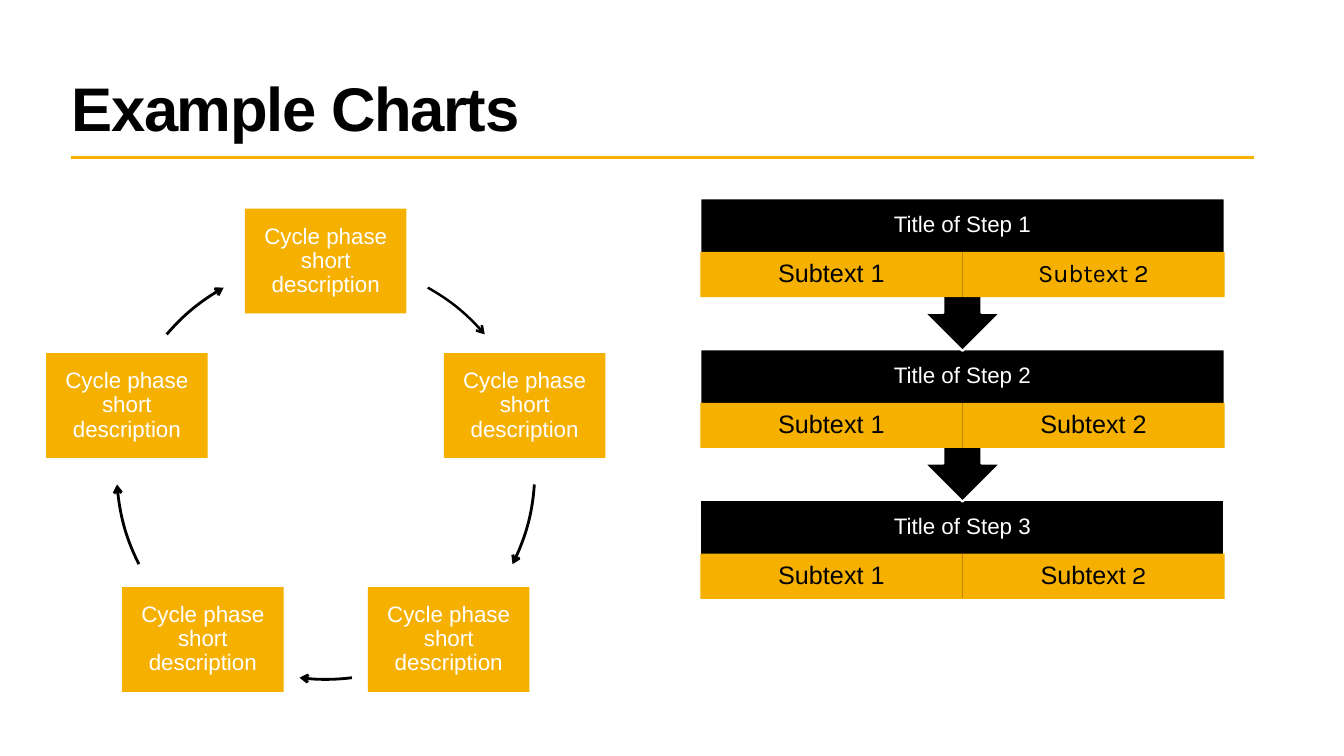
import math
from dataclasses import dataclass

import pptx
import pptx.util
import pptx.dml.color
import pptx.enum.shapes
import pptx.enum.text
import pptx.oxml.ns
from lxml import etree

Cm, Pt = pptx.util.Cm, pptx.util.Pt
SHAPE = pptx.enum.shapes.MSO_SHAPE
ALIGN = pptx.enum.text.PP_ALIGN


@dataclass(frozen=True)
class Theme:
    gold: str = "F5B000"
    black: str = "000000"
    white: str = "FFFFFF"
    font: str = "Arial"
    alt: str = "Karla"
    head: int = 44
    label: int = 16
    sub: int = 18


THEME = Theme()


def color(code):
    return pptx.dml.color.RGBColor.from_string(code)


def add_tail(line):
    """Put an open arrowhead at the end of a line."""
    ln = line._get_or_add_ln()
    etree.SubElement(ln, pptx.oxml.ns.qn("a:tailEnd"), type="arrow")


def add_block(slide, kind, box, fill, edge=None):
    shape = slide.shapes.add_shape(kind, *map(Cm, box))
    shape.shadow.inherit = False
    shape.fill.solid()
    shape.fill.fore_color.rgb = color(fill)
    if edge:
        shape.line.color.rgb = color(edge)
        shape.line.width = Pt(1.5)
    else:
        shape.line.fill.background()
    return shape


def write(shape, runs, size, ink, pad, align=ALIGN.CENTER):
    """Fill a shape with one paragraph of (text, font) runs."""
    frame = shape.text_frame
    frame.word_wrap = True
    frame.auto_size = pptx.enum.text.MSO_AUTO_SIZE.NONE
    frame.vertical_anchor = pptx.enum.text.MSO_ANCHOR.MIDDLE
    frame.margin_left = frame.margin_right = Cm(pad[0])
    frame.margin_top = frame.margin_bottom = Cm(pad[1])
    para = frame.paragraphs[0]
    para.alignment = align
    para.line_spacing = 0.9
    for text, font in runs:
        run = para.add_run()
        run.text = text
        run.font.name = font
        run.font.size = Pt(size)
        run.font.color.rgb = color(ink)
    return para


def add_title(slide, box, text):
    left, top, width, height = box
    title = slide.shapes.title
    title.left, title.top, title.width, title.height = map(Cm, box)
    para = write(title, [(text, THEME.font)], THEME.head, THEME.black,
                 (0.25, 0.13), ALIGN.LEFT)
    font = para.runs[0].font
    font.bold = True
    font._element.set("spc", "-100")

    # Rule below the title
    base = top + height
    rule = slide.shapes.add_connector(
        pptx.enum.shapes.MSO_CONNECTOR.STRAIGHT,
        Cm(left + 0.25), Cm(base), Cm(left + width + 0.84), Cm(base))
    rule.line.color.rgb = color(THEME.gold)
    rule.line.width = Pt(2.25)
    etree.SubElement(rule._element.spPr, pptx.oxml.ns.qn("a:effectLst"))


def add_cycle(slide, box, text, arcs):
    """Spread phases clockwise on the circle inside the box, from the top."""
    left, top, size, _ = box
    radius = size / 2
    wide, high = 4.07, 2.64
    for index, (start, end) in enumerate(arcs):
        # Phase
        angle = math.radians(360 / len(arcs) * index)
        x = left + radius + radius * math.sin(angle)
        y = top + radius - radius * math.cos(angle)
        phase = add_block(slide, SHAPE.RECTANGLE,
                          (x - wide / 2, y - high / 2, wide, high), THEME.gold)
        write(phase, [(text, THEME.font)], THEME.label, THEME.white,
              (0.18, 0.18))

        # Arrow to the next phase; arc angles count from three o'clock
        arc = add_block(slide, SHAPE.ARC, box, THEME.gold, THEME.black)
        arc.fill.background()
        arc.line.width = Pt(2 if index else 1.75)
        for slot, turn in enumerate((start, end)):
            arc.adjustments[slot] = (turn - 90) % 360 * 0.6
        add_tail(arc.line)


def add_step(slide, box, name, subs, last):
    """Draw one step; all but the last point down to the next."""
    left, top, width, height = box
    band, row, body = 1.35, 1.14, 2.49
    if last:
        add_block(slide, SHAPE.RECTANGLE, (left, top, width, body),
                  THEME.black, THEME.white)
    else:
        arrow = add_block(slide, SHAPE.UP_ARROW_CALLOUT, box,
                          THEME.black, THEME.white)
        arrow.rotation = 180
    label = slide.shapes.add_textbox(*map(Cm, (left, top, width, band)))
    write(label, [(name, THEME.font)], THEME.label, THEME.white, (0.3, 0.3))

    # Equal cells below the step title
    cell = width / len(subs)
    for index, runs in enumerate(subs):
        part = add_block(slide, SHAPE.RECTANGLE,
                         (left + index * cell, top + band, cell, row),
                         THEME.gold)
        write(part, runs, THEME.sub, THEME.black, (0.36, 0.08))


def add_steps(slide, box, steps):
    left, top, width, height = box
    pitch = 3.8
    # Lowest first, so that each arrow tip lies over the next step
    for index in reversed(range(len(steps))):
        name, subs = steps[index]
        add_step(slide, (left, top + index * pitch, width, height),
                 name, subs, index == len(steps) - 1)


def main():
    deck = pptx.Presentation()
    deck.slide_width, deck.slide_height = Cm(33.87), Cm(19.05)
    slide = deck.slides.add_slide(deck.slide_layouts.get_by_name("Title Only"))

    add_title(slide, (1.55, 1.63, 29.21, 2.34), "Example Charts")

    # Start and end of each arrow, in degrees clockwise from the top
    arcs = [(29.2, 49.5), (93.9, 116.7), (172.8, 187.2),
            (243.3, 266.1), (310.5, 330.8)]
    add_cycle(slide, (2.94, 6.58, 10.54, 10.54),
              "Cycle phase short description", arcs)

    first = [("Subtext 1", THEME.font)]
    steps = [
        ("Title of Step 1", [first, [("Subtext 2", THEME.alt)]]),
        ("Title of Step 2", [first, [("Subtext 2", THEME.font)]]),
        ("Title of Step 3",
         [first, [("Subtext", THEME.font), (" 2", THEME.alt)]]),
    ]
    add_steps(slide, (17.65, 5, 13.21, 3.84), steps)

    deck.save("out.pptx")


if __name__ == "__main__":
    main()
